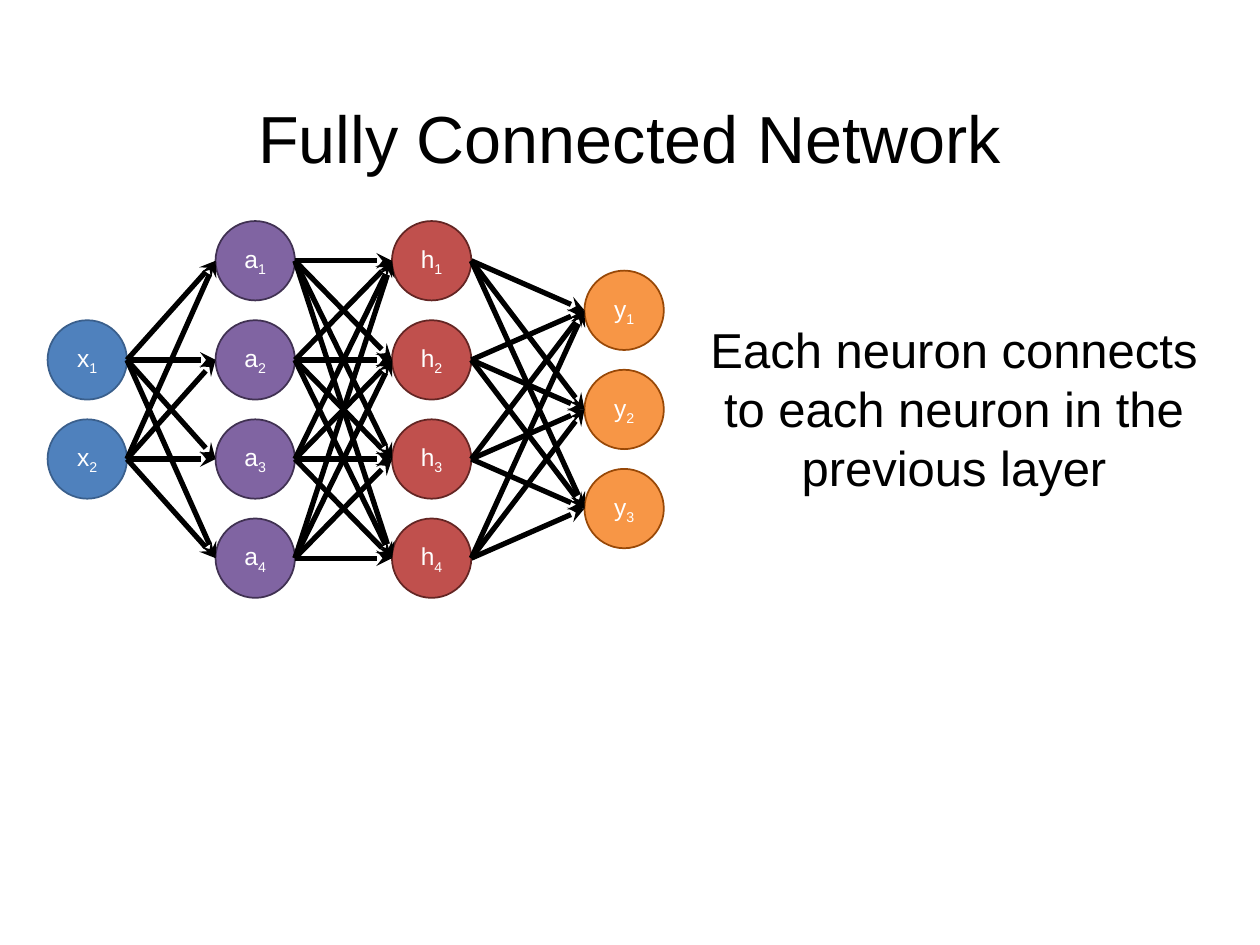
from dataclasses import dataclass
from itertools import pairwise, product

from lxml.etree import SubElement
from pptx import Presentation
from pptx.dml.color import RGBColor
from pptx.enum.shapes import MSO_CONNECTOR as Connector, MSO_SHAPE as Shape
from pptx.enum.text import MSO_ANCHOR as Anchor, MSO_AUTO_SIZE as AutoSize, PP_ALIGN as Align
from pptx.oxml.ns import qn
from pptx.util import Pt


@dataclass(frozen=True)
class Theme:
    font: str = "Arial"
    ink: str = "000000"
    node_text: str = "FFFFFF"
    title_size: float = 38
    body_size: float = 28
    node_size: float = 14
    outline: float = 1
    edge: float = 3


@dataclass(frozen=True)
class Layer:
    name: str
    count: int
    left: float
    fill: str
    line: str

    def centers(self):
        top = MIDDLE - (self.count - 1) * PITCH / 2
        return [top + row * PITCH for row in range(self.count)]


THEME = Theme()
DIAMETER = 45.36
PITCH = 56.65
MIDDLE = 234
LAYERS = [
    Layer("x", 2, 27.2, "4F81BD", "3A5F8C"),
    Layer("a", 4, 123.2, "8064A2", "403152"),
    Layer("h", 4, 224, "C0504D", "632523"),
    Layer("y", 3, 334, "F79646", "984807"),
]


def color(code):
    return RGBColor.from_string(code)


def write_text(frame, text, *, size, ink=THEME.ink, anchor=Anchor.TOP,
               spacing=None, subscript=""):
    frame.word_wrap = True
    frame.vertical_anchor = anchor
    para = frame.paragraphs[0]
    para.alignment = Align.CENTER
    para.line_spacing = spacing
    for part in filter(None, (text, subscript)):
        span = para.add_run()
        span.text = part
        span.font.name = THEME.font
        span.font.size = Pt(size)
        span.font.color.rgb = color(ink)
    if subscript:
        span.font._element.set("baseline", "-25000")


def add_title(page, text):
    title = page.shapes.title
    title.left, title.top, title.width, title.height = Pt(49.5), Pt(28.8), Pt(621), Pt(104.4)
    write_text(title.text_frame, text, size=THEME.title_size,
               anchor=Anchor.MIDDLE, spacing=0.9)


def add_caption(page, text):
    box = page.shapes.add_textbox(Pt(397.5), Pt(179.3), Pt(295.2), Pt(108.7))
    write_text(box.text_frame, text, size=THEME.body_size)
    box.text_frame.auto_size = AutoSize.SHAPE_TO_FIT_TEXT


def add_node(page, layer, number, center):
    node = page.shapes.add_shape(Shape.OVAL, Pt(layer.left), Pt(center - DIAMETER / 2),
                                 Pt(DIAMETER), Pt(DIAMETER))
    node.shadow.inherit = False
    node.fill.solid()
    node.fill.fore_color.rgb = color(layer.fill)
    node.line.color.rgb = color(layer.line)
    node.line.width = Pt(THEME.outline)
    write_text(node.text_frame, layer.name, size=THEME.node_size, ink=THEME.node_text,
               anchor=Anchor.MIDDLE, subscript=str(number))


def add_arrow(page, start, end):
    arrow = page.shapes.add_connector(Connector.STRAIGHT, *map(Pt, (*start, *end)))
    arrow.line.color.rgb = color(THEME.ink)
    arrow.line.width = Pt(THEME.edge)
    SubElement(arrow.line._get_or_add_ln(), qn("a:tailEnd"), type="stealth")
    SubElement(arrow._element.spPr, qn("a:effectLst"))


def add_network(page):
    for layer in LAYERS:
        for number, center in enumerate(layer.centers(), 1):
            add_node(page, layer, number, center)
    for source, target in pairwise(LAYERS):
        for begin, end in product(source.centers(), target.centers()):
            add_arrow(page, (source.left + DIAMETER, begin), (target.left, end))


def main():
    deck = Presentation()
    deck.slide_width, deck.slide_height = Pt(720), Pt(540)
    page = deck.slides.add_slide(deck.slide_layouts[5])
    add_title(page, "Fully Connected Network")
    add_caption(page, "Each neuron connects to each neuron in the previous layer")
    add_network(page)
    deck.save("out.pptx")


if __name__ == "__main__":
    main()
